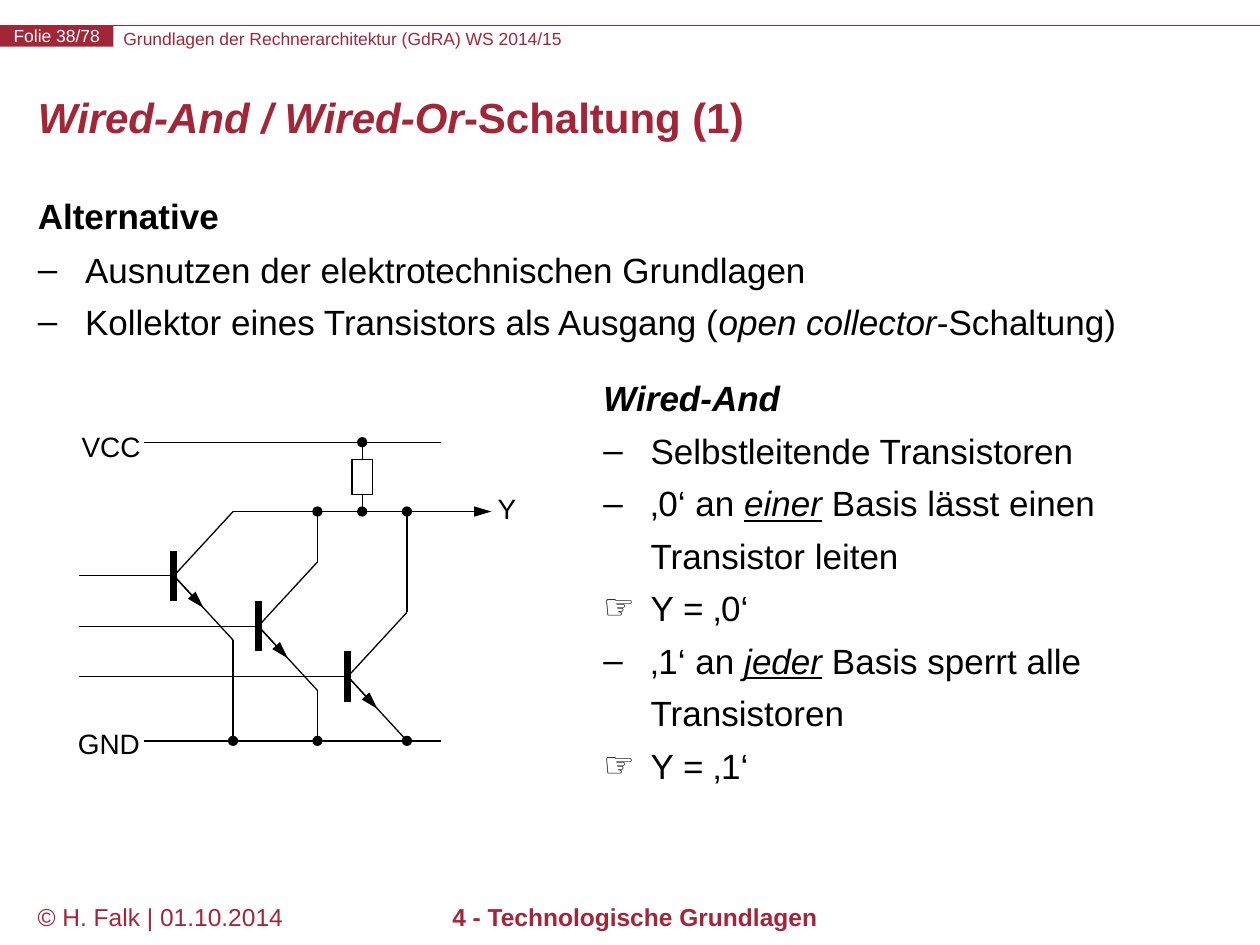
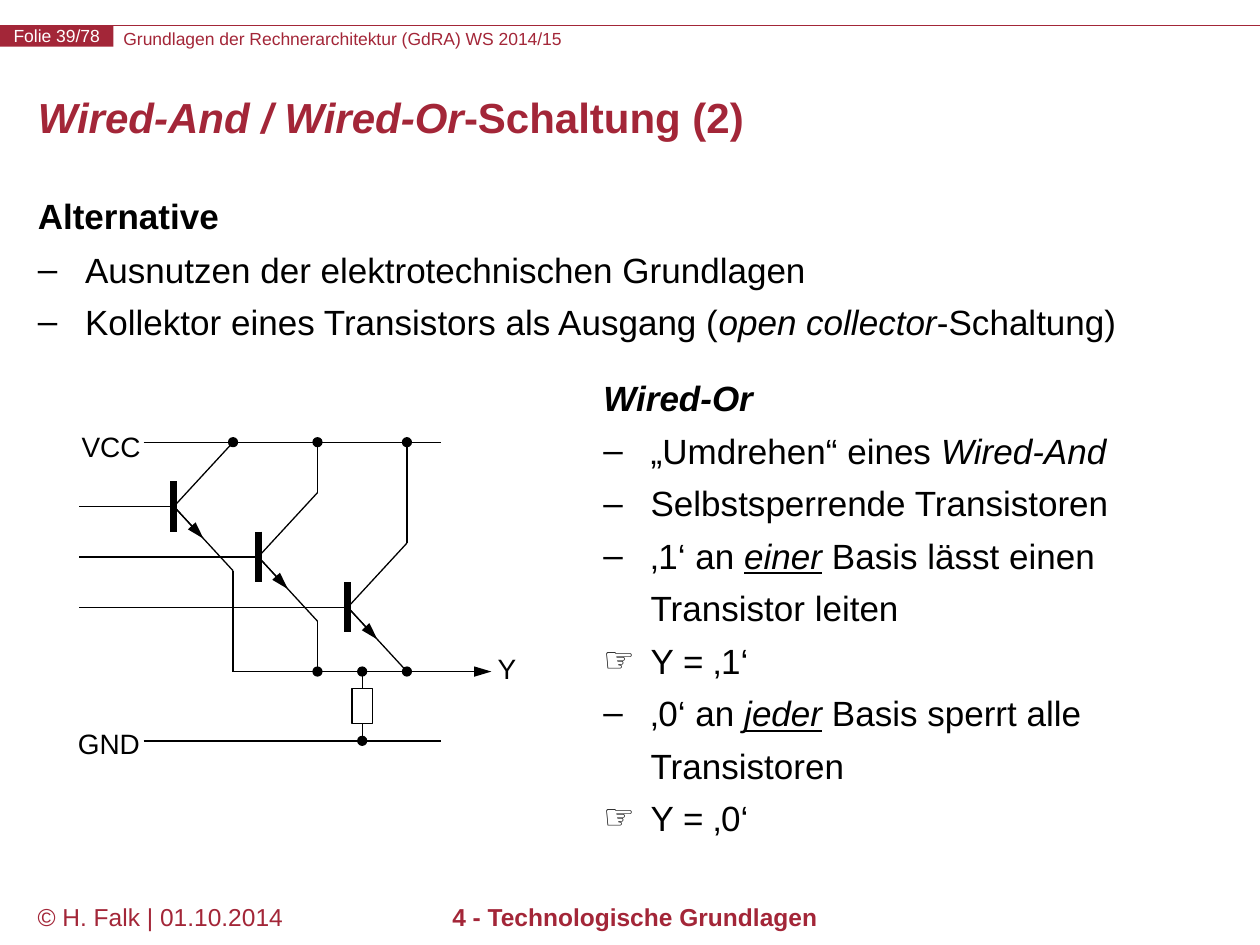
from lxml import etree
from pptx import Presentation
from pptx import util as u
from pptx.dml.color import RGBColor
from pptx.enum import shapes, text
from pptx.oxml.ns import qn

COLORS = {"crimson": "A32638", "ink": "000000", "paper": "FFFFFF"}
FONT = "Arial"
COLUMNS, ROWS = 100, 75
TOTAL_SLIDES = 78
INDENT = u.Inches(0.375)

SUPPLY_ROW, GROUND_ROW = 35.1, 58.8
RAIL_START, RAIL_END = 11.4, 35
OUTPUT_END, RESISTOR_COLUMN = 39, 28.75
BASE_COLUMNS = (13.8, 20.5, 27.6)
INPUT_COLUMN = 6.3
ARM_WIDTH, ARM_HEIGHT, BASE_STEP = 4.7, 5.1, 4
EMITTER_DROP = 2 * ARM_HEIGHT + 2 * BASE_STEP

DASH, HAND = "–", "☞"
ALTERNATIVE = [
    ("", [("Alternative", "b")]),
    (DASH, [("Ausnutzen der elektrotechnischen Grundlagen", "")]),
    (DASH, [("Kollektor eines Transistors als Ausgang (", ""),
            ("open collector", "i"), ("-Schaltung)", "")]),
]


def cells(count):
    return u.Inches(count / 10)


def color(name):
    return RGBColor.from_string(COLORS[name])


def style_run(run, size, color_name, style=""):
    font = run.font
    font.name, font.size = FONT, u.Pt(size)
    font.color.rgb = color(color_name)
    font.bold, font.italic, font.underline = (mark in style for mark in "biu")


def write_runs(paragraph, pieces, size, color_name):
    for content, style in pieces:
        run = paragraph.add_run()
        run.text = content
        style_run(run, size, color_name, style)


def place(shape, left, top, width, height):
    shape.left, shape.top = cells(left), cells(top)
    shape.width, shape.height = cells(width), cells(height)


def add_label(slide, box, content, size, color_name, style="", centred=False,
              wrap=True, inset=True):
    label = slide.shapes.add_textbox(*map(cells, box))
    frame = label.text_frame
    frame.word_wrap = wrap
    if not inset:
        clear_margins(frame)
    paragraph = frame.paragraphs[0]
    paragraph.text = content
    paragraph.alignment = text.PP_ALIGN.CENTER if centred else text.PP_ALIGN.LEFT
    style_run(paragraph.runs[0], size, color_name, style)


def clear_margins(frame):
    frame.margin_left = frame.margin_right = 0
    frame.margin_top = frame.margin_bottom = 0


def add_block(slide, kind, box, fill, line=None, weight=0.75):
    block = slide.shapes.add_shape(kind, *map(cells, box))
    block.shadow.inherit = False
    block.fill.solid()
    block.fill.fore_color.rgb = color(fill)
    if line:
        block.line.color.rgb = color(line)
        block.line.width = u.Pt(weight)
    else:
        block.line.fill.background()
    return block


def add_wire(slide, start, end, weight=0.75, color_name="ink", arrow=False):
    wire = slide.shapes.add_connector(
        shapes.MSO_CONNECTOR.STRAIGHT, *map(cells, (*start, *end)))
    wire.line.color.rgb = color(color_name)
    wire.line.width = u.Pt(weight)
    if arrow:
        etree.SubElement(wire.line._get_or_add_ln(), qn("a:tailEnd"),
                         type="triangle", w="med", len="lg")
    etree.SubElement(wire._element.spPr, qn("a:effectLst"))


def add_dot(slide, column, row):
    add_block(slide, shapes.MSO_SHAPE.OVAL,
              (column - 0.3, row - 0.3, 0.6, 0.6), "ink", "ink", 1.5)


def set_bullet(paragraph, bullet):
    properties = paragraph._p.get_or_add_pPr()
    properties.set("marL", str(INDENT))
    properties.set("indent", str(-INDENT))
    if bullet:
        etree.SubElement(properties, qn("a:buFont"), typeface=FONT)
        etree.SubElement(properties, qn("a:buChar"), char=bullet)
    else:
        etree.SubElement(properties, qn("a:buNone"))


def fill_list(frame, items):
    frame.word_wrap = True
    frame.auto_size = text.MSO_AUTO_SIZE.NONE
    for index, (bullet, pieces) in enumerate(items):
        paragraph = frame.add_paragraph() if index else frame.paragraphs[0]
        paragraph.line_spacing = 1.25 if bullet else 0.95
        paragraph.space_before = paragraph.space_after = u.Pt(0)
        set_bullet(paragraph, bullet)
        write_runs(paragraph, pieces, 20, "ink")


def add_header(slide, number):
    add_wire(slide, (0, 2), (COLUMNS, 2), color_name="crimson")
    add_label(slide, (9.8, 2.2, 66, 1.7),
              "Grundlagen der Rechnerarchitektur (GdRA) WS 2014/15",
              10, "crimson", inset=False)
    badge = add_block(slide, shapes.MSO_SHAPE.RECTANGLE, (0, 2, 9, 1.7), "crimson")
    frame = badge.text_frame
    clear_margins(frame)
    frame.word_wrap = False
    frame.vertical_anchor = text.MSO_ANCHOR.MIDDLE
    paragraph = frame.paragraphs[0]
    paragraph.text = f"Folie {number}/{TOTAL_SLIDES}"
    paragraph.alignment = text.PP_ALIGN.CENTER
    style_run(paragraph.runs[0], 10, "paper")


def add_footer(slide):
    add_label(slide, (2, 71.1, 24, 3.9), "© H. Falk | 01.10.2014", 14, "crimson")
    add_label(slide, (20.1, 71.1, 60.6, 3.9), "4 - Technologische Grundlagen",
              14, "crimson", "b", centred=True)


def add_title(slide, part):
    title = slide.shapes.title
    place(title, 2, 6, 96.1, 7.2)
    frame = title.text_frame
    frame.auto_size = text.MSO_AUTO_SIZE.NONE
    frame.vertical_anchor = text.MSO_ANCHOR.MIDDLE
    paragraph = frame.paragraphs[0]
    paragraph.alignment = text.PP_ALIGN.LEFT
    paragraph.line_spacing = u.Pt(24)
    write_runs(paragraph, [("Wired-And / Wired-Or", "bi"),
                           (f"-Schaltung ({part})", "b")], 24, "crimson")


def add_transistor(slide, base_column, base_row, collector_row, emitter_row):
    base = (base_column, base_row)
    rail_column = base_column + ARM_WIDTH
    collector = (rail_column, base_row - ARM_HEIGHT)
    emitter = (rail_column, base_row + ARM_HEIGHT)
    add_wire(slide, (base_column, base_row - 2), (base_column, base_row + 2), 4)
    add_wire(slide, (INPUT_COLUMN, base_row), base)
    add_wire(slide, base, collector)
    add_wire(slide, base, emitter)
    add_wire(slide, base, (base_column + ARM_WIDTH / 2, base_row + ARM_HEIGHT / 2),
             arrow=True)
    for end, rail_row in ((collector, collector_row), (emitter, emitter_row)):
        if abs(end[1] - rail_row) > 0.1:
            add_wire(slide, end, (rail_column, rail_row))


def add_resistor(slide, top_row, bottom_row):
    middle = (top_row + bottom_row) / 2
    add_wire(slide, (RESISTOR_COLUMN, top_row), (RESISTOR_COLUMN, bottom_row))
    for row in (top_row, bottom_row):
        add_dot(slide, RESISTOR_COLUMN, row)
    add_block(slide, shapes.MSO_SHAPE.RECTANGLE,
              (RESISTOR_COLUMN - 0.8, middle - 1.4, 1.6, 2.8), "paper", "ink")


def add_circuit(slide, collector_row, output_at_collector):
    emitter_row = collector_row + EMITTER_DROP
    output_row = collector_row if output_at_collector else emitter_row
    rail_columns = [column + ARM_WIDTH for column in BASE_COLUMNS]
    for index, column in enumerate(BASE_COLUMNS):
        base_row = collector_row + ARM_HEIGHT + index * BASE_STEP
        add_transistor(slide, column, base_row, collector_row, emitter_row)
    for row in (SUPPLY_ROW, GROUND_ROW):
        add_wire(slide, (RAIL_START, row), (RAIL_END, row))
    add_wire(slide, (rail_columns[0], output_row), (OUTPUT_END, output_row), arrow=True)
    for row in (collector_row, emitter_row):
        for column in rail_columns[row == output_row:]:
            add_dot(slide, column, row)
    if output_at_collector:
        add_resistor(slide, SUPPLY_ROW, output_row)
    else:
        add_resistor(slide, output_row, GROUND_ROW)
    for name, left, top, width in (("VCC", 5.5, SUPPLY_ROW - 1.5, 6.7),
                                   ("GND", 5.2, GROUND_ROW - 1.6, 7),
                                   ("Y", 38.5, output_row - 2.1, 3.5)):
        add_label(slide, (left, top, width, 3.7), name, 16, "ink", wrap=False)


def switching_rules(low, high):
    return [
        (DASH, [(f"‚{low}‘ an ", ""), ("einer", "iu"),
                (" Basis lässt einen Transistor leiten", "")]),
        (HAND, [(f"Y = ‚{low}‘", "")]),
        (DASH, [(f"‚{high}‘ an ", ""), ("jeder", "iu"),
                (" Basis sperrt alle Transistoren", "")]),
        (HAND, [(f"Y = ‚{high}‘", "")]),
    ]


def add_gate_slide(presentation, part, number, facts, collector_row,
                   output_at_collector):
    slide = presentation.slides.add_slide(presentation.slide_layouts[1])
    add_header(slide, number)
    add_footer(slide)
    add_title(slide, part)
    body = slide.placeholders[1]
    place(body, 2, 15.2, 96.1, 54.6)
    fill_list(body.text_frame, ALTERNATIVE)
    notes = slide.shapes.add_textbox(*map(cells, (46.9, 29.6, 47.2, 36.4)))
    fill_list(notes.text_frame, facts)
    add_circuit(slide, collector_row, output_at_collector)


def main():
    presentation = Presentation()
    presentation.slide_width, presentation.slide_height = cells(COLUMNS), cells(ROWS)
    wired_and = [("", [("Wired-And", "bi")]),
                 (DASH, [("Selbstleitende Transistoren", "")]),
                 *switching_rules(0, 1)]
    wired_or = [("", [("Wired-Or", "bi")]),
                (DASH, [("„Umdrehen“ eines ", ""), ("Wired-And", "i")]),
                (DASH, [("Selbstsperrende Transistoren", "")]),
                *switching_rules(1, 0)]
    add_gate_slide(presentation, 1, 38, wired_and, GROUND_ROW - EMITTER_DROP, True)
    add_gate_slide(presentation, 2, 39, wired_or, SUPPLY_ROW, False)
    presentation.save("out.pptx")


if __name__ == "__main__":
    main()
